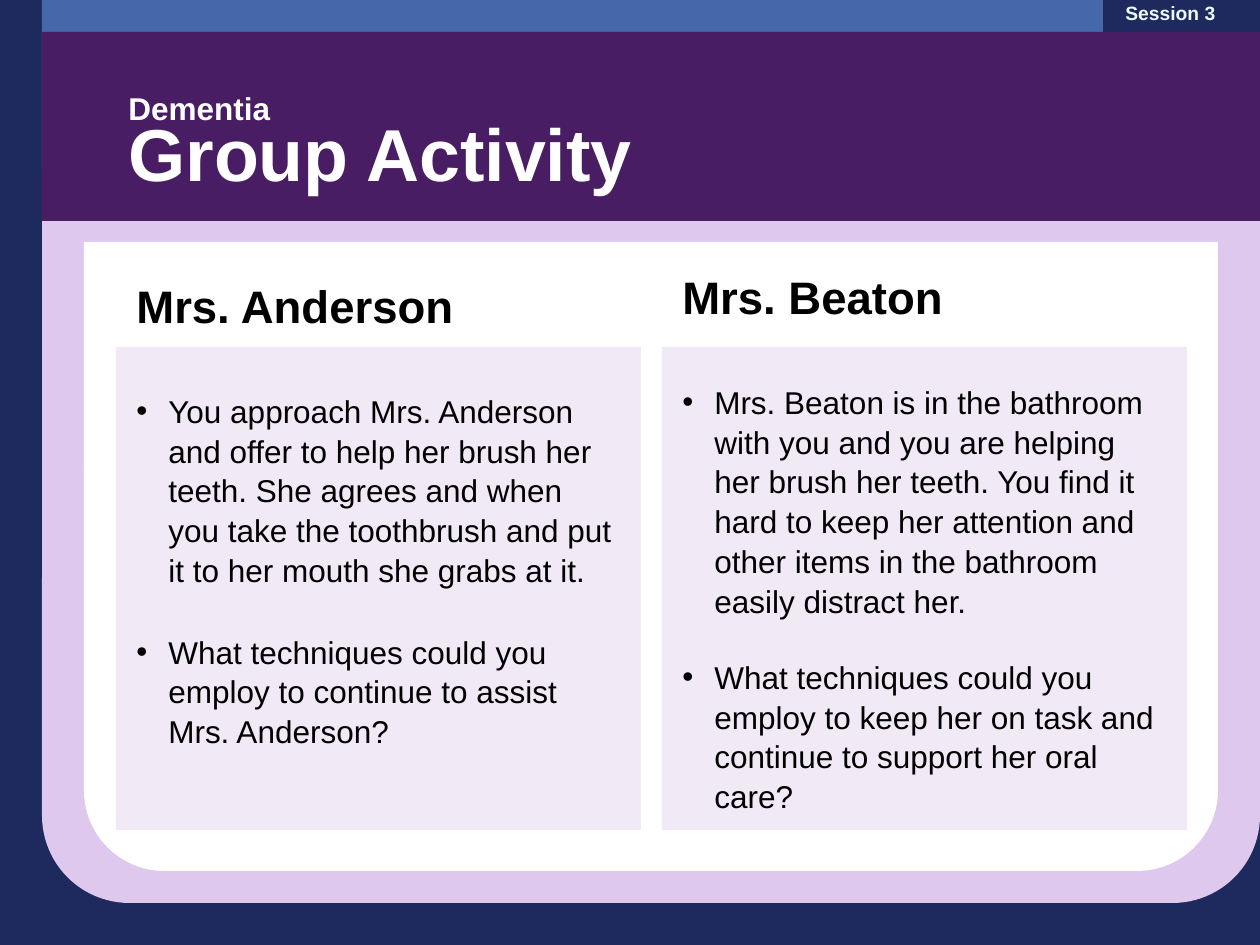
from lxml.etree import SubElement
from pptx import Presentation
from pptx.dml.color import RGBColor
from pptx.enum.shapes import MSO_SHAPE
from pptx.enum.text import MSO_ANCHOR
from pptx.oxml.ns import qn
from pptx.util import Emu, Pt

THEME = {
    "font": "Arial",
    "navy": "1E2A5E", "lilac": "DFC8ED", "white": "FFFFFF", "blue": "4568AA",
    "purple": "491D64", "mint": "ECFAF7", "black": "000000",
    "tag": 11, "body": 18, "heading": 26, "title": 42,
}
SCALE = 914400 // 126
INDENT = 32
CARD_ALPHA = 40

PANELS = [
    ("rect", "navy", (0, 0, 1260, 945)),
    ("round", "lilac", (42, 378, 1218, 525)),
    ("rect", "lilac", (42, 158, 1218, 305)),
    ("round", "white", (84, 387, 1134, 484)),
    ("rect", "white", (84, 242, 1134, 231)),
    ("rect", "blue", (42, 0, 1061, 168)),
    ("rect", "purple", (42, 32, 1218, 189)),
]
TAG = ("Session 3", (1113, -5, 158, 48))
TITLE = (("Dementia", "body"), ("Group Activity", "title"))
TITLE_BOX = (116, 53, 1090, 147)
CARD_LEFT, CARD_TOP, CARD_W, CARD_H, CARD_GAP = 116, 347, 525, 483, 21
CASES = [
    {"name": "Mrs. Anderson", "top": 269, "height": 508, "gap": 24, "points": [
        "You approach Mrs. Anderson and offer to help her brush her teeth. She agrees "
        "and when you take the toothbrush and put it to her mouth she grabs at it.",
        "What techniques could you employ to continue to assist Mrs. Anderson?"]},
    {"name": "Mrs. Beaton", "top": 260, "height": 624, "gap": 21, "points": [
        "Mrs. Beaton is in the bathroom with you and you are helping her brush her teeth. "
        "You find it hard to keep her attention and other items in the bathroom easily "
        "distract her.",
        "What techniques could you employ to keep her on task and continue to support "
        "her oral care?"]},
]


def px(*values):
    return [Emu(v * SCALE) for v in values]


def color(name):
    return RGBColor.from_string(THEME[name])


def add_panel(s, kind, fill, box, alpha=None):
    preset = {"rect": MSO_SHAPE.RECTANGLE, "round": MSO_SHAPE.ROUNDED_RECTANGLE}[kind]
    sp = s.shapes.add_shape(preset, *px(*box))
    sp.shadow.inherit = False
    sp.line.fill.background()
    sp.fill.solid()
    sp.fill.fore_color.rgb = color(fill)
    if alpha:
        clr = sp.fill._xPr.find(qn("a:solidFill"))[0]
        SubElement(clr, qn("a:alpha"), val=str(alpha * 1000))


def add_text(s, box):
    tf = s.shapes.add_textbox(*px(*box)).text_frame
    tf.word_wrap = True
    return tf


def add_run(p, text, size, fill, bold=True):
    r = p.add_run()
    r.text = text
    for key, value in {"name": THEME["font"], "size": Pt(THEME[size]), "bold": bold}.items():
        setattr(r.font, key, value)
    r.font.color.rgb = color(fill)


def format_paragraph(p, **values):
    for key, value in values.items():
        setattr(p, key, value)


def add_bullet(p):
    pPr = p._p.get_or_add_pPr()
    left = INDENT * SCALE
    pPr.set("marL", str(left))
    pPr.set("indent", str(-left))
    SubElement(pPr, qn("a:buFont"), typeface=THEME["font"])
    SubElement(pPr, qn("a:buChar"), char="•")


def add_case(s, i, case):
    left = CARD_LEFT + i * (CARD_W + CARD_GAP)
    add_panel(s, "rect", "lilac", (left, CARD_TOP, CARD_W, CARD_H), CARD_ALPHA)
    tf = add_text(s, (left + 8, case["top"], 506, case["height"]))
    p = tf.paragraphs[0]
    add_run(p, case["name"], "heading", "black")
    format_paragraph(p, line_spacing=1.05, space_after=Pt(33))
    for n, point in enumerate(case["points"]):
        p = tf.add_paragraph()
        add_bullet(p)
        add_run(p, point, "body", "black", False)
        format_paragraph(p, line_spacing=1.05, space_before=Pt(case["gap"] if n else 0))


def main():
    prs = Presentation()
    prs.slide_width, prs.slide_height = px(1260, 945)
    s = prs.slides.add_slide(prs.slide_layouts[6])
    for panel in PANELS:
        add_panel(s, *panel)

    text, box = TAG
    add_run(add_text(s, box).paragraphs[0], text, "tag", "mint")

    tf = add_text(s, TITLE_BOX)
    tf.vertical_anchor = MSO_ANCHOR.MIDDLE
    p = tf.paragraphs[0]
    format_paragraph(p, line_spacing=Pt(40))
    for n, (text, size) in enumerate(TITLE):
        if n:
            p.add_line_break()
        add_run(p, text, size, "white")

    for i, case in enumerate(CASES):
        add_case(s, i, case)
    prs.save("out.pptx")


if __name__ == "__main__":
    main()
